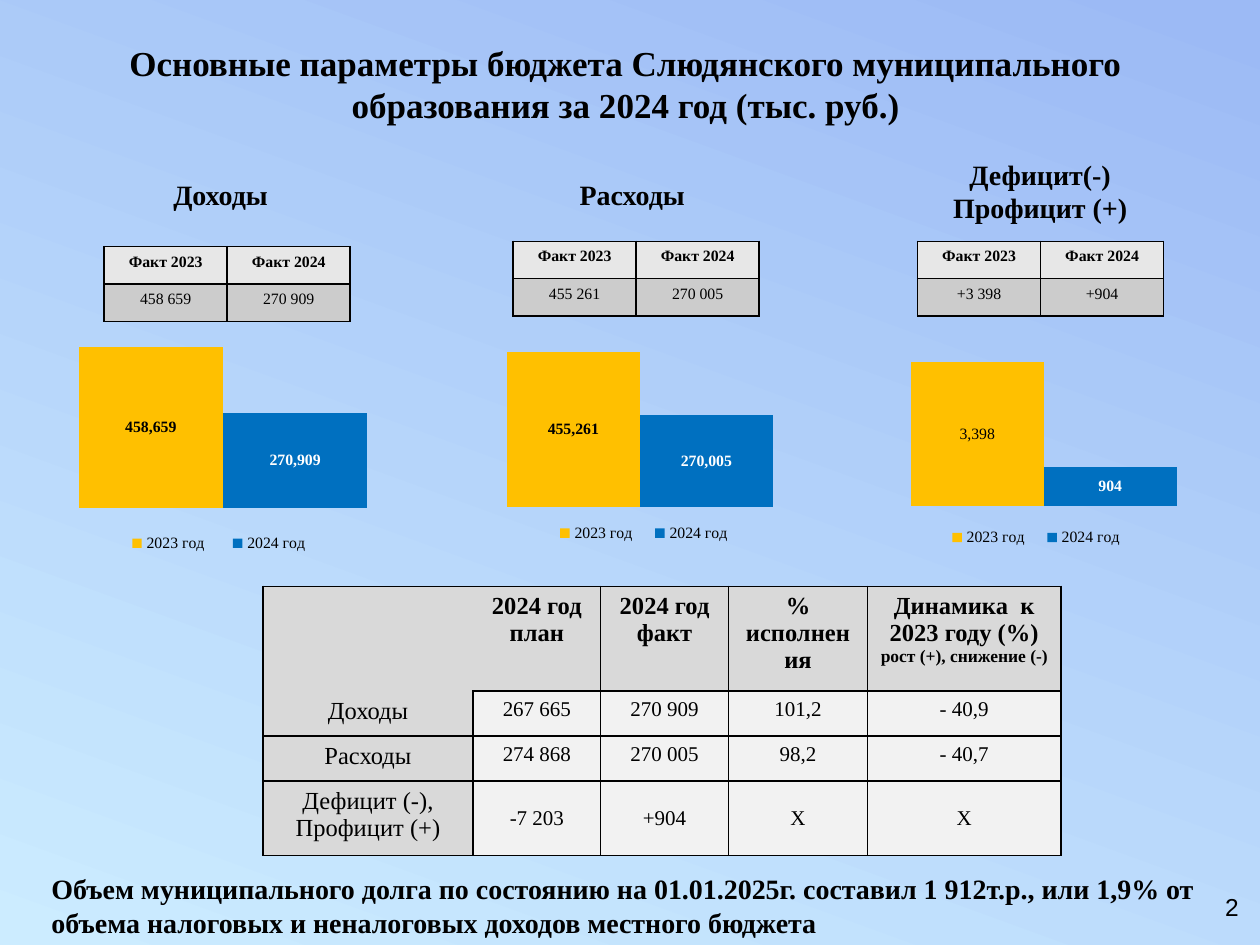
from dataclasses import dataclass

from lxml import etree
from pptx import Presentation
from pptx.chart.data import CategoryChartData
from pptx.dml.color import RGBColor
from pptx.enum import chart as chart_enum, text
from pptx.oxml import ns
from pptx.util import Pt


@dataclass(frozen=True)
class Theme:
    serif: str = "Times New Roman"
    sans: str = "Arial"
    black: str = "000000"
    white: str = "FFFFFF"
    sky: str = "CCECFF"
    blue_sky: str = "9CBAF5"
    amber: str = "FFC000"
    blue: str = "0070C0"
    fact_head: str = "E7E7E7"
    fact_body: str = "CCCCCC"
    summary_head: str = "D9D9D9"
    summary_body: str = "F2F2F2"
    title: int = 20
    heading: int = 16
    label: int = 14
    value: int = 12
    remark: int = 10
    small: int = 9


@dataclass(frozen=True)
class Box:
    left: float
    top: float
    width: float
    height: float

    def lengths(self) -> tuple:
        return Pt(self.left), Pt(self.top), Pt(self.width), Pt(self.height)


@dataclass(frozen=True)
class Style:
    size: int
    bold: bool = False
    font: str = "Times New Roman"
    align: text.PP_ALIGN = text.PP_ALIGN.CENTER


@dataclass(frozen=True)
class Indicator:
    heading: tuple[str, ...]
    heading_box: Box
    facts: tuple[str, str]
    facts_at: tuple[float, float]
    values: tuple[int, int]
    chart_box: Box
    plot_at: tuple[float, float]
    legend_at: tuple[float, float]
    axis_max: int
    first_bold: bool = True


THEME = Theme()
YEARS = ("2023 год", "2024 год")
NUMBER_FORMAT = "#,##0"
EDGES = "LRTB"

INDICATORS = (
    Indicator(("Доходы",), Box(24, 98, 204, 26.5), ("458 659", "270 909"), (59.5, 141),
              (458659, 270909), Box(2, 179.3, 241.2, 156.2), (0.05, 0.07), (0.25, 0.79), 500000),
    Indicator(("Расходы",), Box(256.3, 98, 210, 26.5), ("455 261", "270 005"), (293.2, 138),
              (455261, 270005), Box(250, 182.2, 222.5, 151.2), (0.05, 0.07), (0.27, 0.76), 500000),
    Indicator(("Дефицит(-)", "Профицит (+)"), Box(488.2, 86.4, 212.4, 46), ("+3 398", "+904"),
              (524.3, 138), (3398, 904), Box(483, 190.8, 222.5, 151.2), (0.04, 0.01),
              (0.23, 0.72), 4000, False),
)

SUMMARY_BOX = Box(150.3, 335, 456, 153.8)
SUMMARY_COLUMNS = (120, 73, 73, 79.5, 110.5)
SUMMARY_ROWS = (60, 25.7, 25.7, 42.4)
SUMMARY_HEADS = ("2024 год план", "2024 год факт", "% исполнения", "Динамика  к 2023 году (%)")
SUMMARY_REMARK = "рост (+), снижение (-)"
SUMMARY_DATA = (
    ("Доходы", "267 665", "270 909", "101,2", "- 40,9"),
    ("Расходы", "274 868", "270 005", "98,2", "- 40,7"),
    ("Дефицит (-), Профицит (+)", "-7 203", "+904", "Х", "Х"),
)
# The corner cell is open towards its right and lower neighbours
OPEN_EDGES = {(0, 0): "RB", (0, 1): "L", (1, 0): "T"}


def color(value: str) -> RGBColor:
    return RGBColor.from_string(value)


def style_font(font, style: Style, fill: str = THEME.black) -> None:
    font.name, font.size, font.bold = style.font, Pt(style.size), style.bold
    font.color.rgb = color(fill)


def write(frame, lines: tuple) -> None:
    """Write (text, style) pairs, one paragraph each."""
    for index, (line, style) in enumerate(lines):
        paragraph = frame.add_paragraph() if index else frame.paragraphs[0]
        paragraph.alignment = style.align
        run = paragraph.add_run()
        run.text = line
        style_font(run.font, style)


def add_text(slide, box: Box, lines: tuple[str, ...], style: Style) -> None:
    frame = slide.shapes.add_textbox(*box.lengths()).text_frame
    frame.word_wrap = True
    write(frame, tuple((line, style) for line in lines))


def set_borders(cell, open_edges: str) -> None:
    properties = cell._tc.get_or_add_tcPr()
    for index, edge in enumerate(EDGES):
        line = etree.Element(ns.qn(f"a:ln{edge}"), w=str(Pt(1)))
        if edge in open_edges:
            etree.SubElement(line, ns.qn("a:noFill"))
        else:
            fill = etree.SubElement(line, ns.qn("a:solidFill"))
            etree.SubElement(fill, ns.qn("a:srgbClr"), val=THEME.black)
        properties.insert(index, line)


def fill_cell(cell, lines: tuple, fill: str, open_edges: str = "") -> None:
    cell.fill.solid()
    cell.fill.fore_color.rgb = color(fill)
    set_borders(cell, open_edges)
    write(cell.text_frame, lines)


def add_table(slide, box: Box, columns: tuple, rows: tuple):
    table = slide.shapes.add_table(len(rows), len(columns), *box.lengths()).table
    for column, width in zip(table.columns, columns):
        column.width = Pt(width)
    for row, height in zip(table.rows, rows):
        row.height = Pt(height)
    return table


def add_facts(slide, indicator: Indicator) -> None:
    table = add_table(slide, Box(*indicator.facts_at, 140.6, 42.6), (70.3, 70.3), (21.3, 21.3))
    for column, (head, fact) in enumerate(zip(("Факт 2023", "Факт 2024"), indicator.facts)):
        fill_cell(table.cell(0, column), ((head, Style(THEME.small, True)),), THEME.fact_head)
        fill_cell(table.cell(1, column), ((fact, Style(THEME.small)),), THEME.fact_body)


def set_layout(layout, left: float, top: float, width: float, height: float, inner: bool) -> None:
    manual = etree.SubElement(layout, ns.qn("c:manualLayout"))
    entries = {"layoutTarget": "inner"} if inner else {}
    entries |= {"xMode": "edge", "yMode": "edge", "x": left, "y": top, "w": width, "h": height}
    for name, value in entries.items():
        etree.SubElement(manual, ns.qn(f"c:{name}"), val=str(value))


def add_column_chart(slide, indicator: Indicator) -> None:
    data = CategoryChartData(number_format=NUMBER_FORMAT)
    data.categories = ["1"]
    for year, value in zip(YEARS, indicator.values):
        data.add_series(year, [value])
    chart = slide.shapes.add_chart(chart_enum.XL_CHART_TYPE.COLUMN_CLUSTERED,
                                   *indicator.chart_box.lengths(), data).chart
    chart.has_title = False
    style_font(chart.font, Style(THEME.small))
    chart.category_axis.visible = chart.value_axis.visible = False
    chart.value_axis.has_major_gridlines = False
    chart.value_axis.minimum_scale, chart.value_axis.maximum_scale = 0, indicator.axis_max
    plot = chart.plots[0]
    plot.gap_width, plot.overlap, plot.vary_by_categories = 75, 0, False
    looks = ((THEME.amber, THEME.black, indicator.first_bold), (THEME.blue, THEME.white, True))
    for series, (fill, label_color, bold) in zip(plot.series, looks):
        series.format.fill.solid()
        series.format.fill.fore_color.rgb = color(fill)
        labels = series.data_labels
        labels.show_value = True
        labels.number_format, labels.number_format_is_linked = NUMBER_FORMAT, False
        labels.position = chart_enum.XL_LABEL_POSITION.CENTER
        style_font(labels.font, Style(THEME.small, bold), label_color)
    # Fixed places for the plot area and the legend
    chart.has_legend = True
    chart.legend.position = chart_enum.XL_LEGEND_POSITION.BOTTOM
    chart.legend.include_in_layout = False
    plot_area = chart._chartSpace.chart.plotArea
    layout = plot_area.find(ns.qn("c:layout"))
    if layout is None:
        layout = etree.Element(ns.qn("c:layout"))
        plot_area.insert(0, layout)
    set_layout(layout, *indicator.plot_at, 0.94, 0.64, True)
    legend_layout = etree.Element(ns.qn("c:layout"))
    chart.legend._element.find(ns.qn("c:legendPos")).addnext(legend_layout)
    set_layout(legend_layout, *indicator.legend_at, 0.52, 0.1, False)


def add_summary(slide) -> None:
    table = add_table(slide, SUMMARY_BOX, SUMMARY_COLUMNS, SUMMARY_ROWS)
    head, label, value = Style(THEME.label, True), Style(THEME.label), Style(THEME.value)
    rows = [[()] + [((name, head),) for name in SUMMARY_HEADS]]
    rows[0][-1] += ((SUMMARY_REMARK, Style(THEME.remark, True)),)
    rows += [[((item, value if column else label),) for column, item in enumerate(row)]
             for row in SUMMARY_DATA]
    for row, cells in enumerate(rows):
        for column, lines in enumerate(cells):
            cell = table.cell(row, column)
            is_body = row > 0 and column > 0
            fill_cell(cell, lines, THEME.summary_body if is_body else THEME.summary_head,
                      OPEN_EDGES.get((row, column), ""))
            if is_body and row == len(SUMMARY_DATA):
                cell.vertical_anchor = text.MSO_ANCHOR.MIDDLE


def main() -> None:
    presentation = Presentation()
    presentation.slide_width, presentation.slide_height = Pt(720), Pt(540)
    slide = presentation.slides.add_slide(presentation.slide_layouts[6])

    # Background
    background = slide.background.fill
    background.gradient()
    background.gradient_angle = 70
    for stop, place, tint in zip(background.gradient_stops, (0, 0.99), (THEME.sky, THEME.blue_sky)):
        stop.position, stop.color.rgb = place, color(tint)

    # Title
    add_text(slide, Box(31, 20.2, 653, 55.4),
             ("Основные параметры бюджета Слюдянского муниципального образования "
              "за 2024 год (тыс. руб.)",), Style(THEME.title, True))

    # Heading, facts and chart of each indicator
    for indicator in INDICATORS:
        add_text(slide, indicator.heading_box, indicator.heading, Style(THEME.heading, True))
        add_facts(slide, indicator)
        add_column_chart(slide, indicator)

    # Summary table, debt note and slide number
    add_summary(slide)
    add_text(slide, Box(22.3, 494.6, 671, 46),
             ("Объем муниципального долга по состоянию на 01.01.2025г. составил 1 912т.р., "
              "или 1,9% от объема налоговых и неналоговых доходов местного бюджета",),
             Style(THEME.heading, True, align=text.PP_ALIGN.LEFT))
    add_text(slide, Box(547.2, 506.2, 167.8, 37.4), ("2",),
             Style(THEME.label, font=THEME.sans, align=text.PP_ALIGN.RIGHT))
    presentation.save("out.pptx")


if __name__ == "__main__":
    main()
